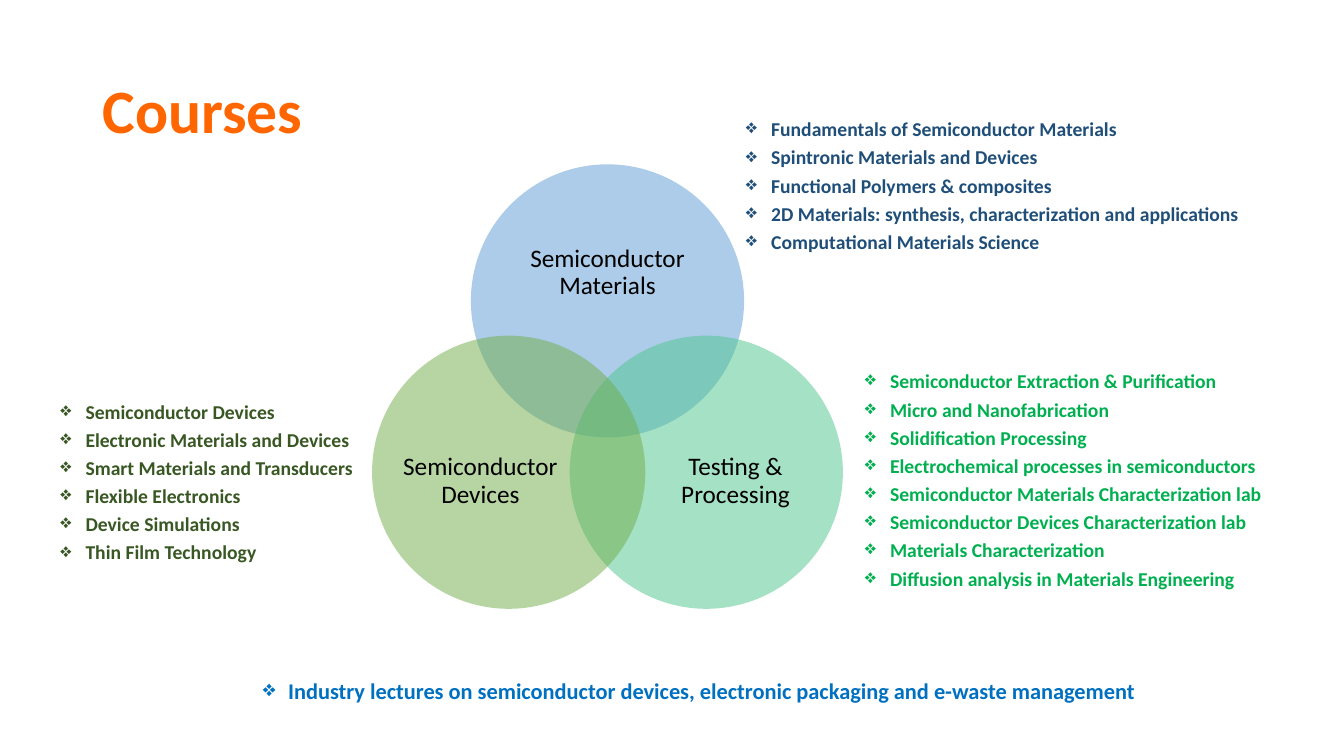
import pptx
import pptx.util
import pptx.dml.color
import pptx.enum.shapes
import pptx.enum.text
import pptx.oxml.ns
import lxml.etree

Inches = pptx.util.Inches
Pt = pptx.util.Pt
qn = pptx.oxml.ns.qn
ALIGN = pptx.enum.text.PP_ALIGN
ANCHOR = pptx.enum.text.MSO_ANCHOR

COLORS = {
    "title": "FF6600", "label": "000000",
    "blue circle": "5B9BD5", "mint circle": "4DC58D", "green circle": "70AD47",
    "materials": "1F4E79", "devices": "385723",
    "processing": "00B050", "industry": "0070C0",
}
DIAMETER = 2.71

# Circle colour, circle left and top, label, label box
VENN = [
    ("blue circle", 4.67, 1.63, "Semiconductor Materials", (5.03, 2.1, 1.99, 1.22)),
    ("mint circle", 5.65, 3.33, "Testing & Processing", (6.48, 4.03, 1.63, 1.49)),
    ("green circle", 3.69, 3.33, "Semiconductor Devices", (3.95, 4.03, 1.63, 1.49)),
]

# Colour, box, text size, courses
COURSES = [
    ("materials", (6.8, 1.14, 5.61, 1.56), 14, [
        "Fundamentals of Semiconductor Materials",
        "Spintronic Materials and Devices",
        "Functional Polymers & composites",
        "2D Materials: synthesis, characterization and applications",
        "Computational Materials Science",
    ]),
    ("devices", (0, 3.94, 4.16, 1.73), 14, [
        "Semiconductor Devices",
        "Electronic Materials and Devices",
        "Smart Materials and Transducers",
        "Flexible Electronics",
        "Device Simulations",
        "Thin Film Technology",
    ]),
    ("processing", (7.98, 3.64, 4.73, 2.31), 14, [
        "Semiconductor Extraction & Purification",
        "Micro and Nanofabrication",
        "Solidification Processing",
        "Electrochemical processes in semiconductors",
        "Semiconductor Materials Characterization lab",
        "Semiconductor Devices Characterization lab",
        "Materials Characterization",
        "Diffusion analysis in Materials Engineering",
    ]),
    ("industry", (2.01, 6.7, 10.54, 0.37), 16, [
        "Industry lectures on semiconductor devices, electronic packaging "
        "and e-waste management",
    ]),
]


def rgb(name):
    return pptx.dml.color.RGBColor.from_string(COLORS[name])


def apply(obj, values):
    for name, value in values.items():
        setattr(obj, name, value)


def add_text(s, box, lines, color, size, bold=False, frame=None, para=None):
    """Add a text box with one paragraph per line and return its frame."""
    tf = s.shapes.add_textbox(*map(Inches, box)).text_frame
    apply(tf, {"word_wrap": True, **(frame or {})})
    for i, line in enumerate(lines):
        p = tf.add_paragraph() if i else tf.paragraphs[0]
        apply(p, {"line_spacing": 0.9, **(para or {})})
        r = p.add_run()
        r.text = line
        apply(r.font, {"name": "Calibri", "size": Pt(size), "bold": bold})
        r.font.color.rgb = rgb(color)
    return tf


def add_circle(s, left, top, color):
    """Add a half-transparent circle without an outline."""
    sp = s.shapes.add_shape(pptx.enum.shapes.MSO_SHAPE.OVAL, Inches(left),
                            Inches(top), Inches(DIAMETER), Inches(DIAMETER))
    sp.shadow.inherit = False
    sp.line.fill.background()
    sp.fill.solid()
    sp.fill.fore_color.rgb = rgb(color)
    clr = sp.element.spPr.find(".//" + qn("a:srgbClr"))
    lxml.etree.SubElement(clr, qn("a:alpha"), val="50000")


def add_course_list(s, color, box, size, courses):
    """Add a bulleted list with a hanging indent."""
    tf = add_text(s, box, courses, color, size, bold=True,
                  para={"level": 1, "space_before": Pt(5)})
    for p in tf.paragraphs:
        pPr = p._p.get_or_add_pPr()
        pPr.set("marL", str(Inches(0.75)))
        pPr.set("indent", str(Inches(-0.25)))
        lxml.etree.SubElement(pPr, qn("a:buChar"), char="❖")


def main():
    prs = pptx.Presentation()
    apply(prs, {"slide_width": Inches(13.33), "slide_height": Inches(7.5)})
    s = prs.slides.add_slide(prs.slide_layouts[6])

    # Title
    add_text(s, (0.92, 0.4, 11.5, 1.45), ["Courses"], "title", 44, bold=True,
             frame={"vertical_anchor": ANCHOR.MIDDLE})

    # Venn diagram
    label_frame = {"vertical_anchor": ANCHOR.MIDDLE, "margin_left": 0,
                   "margin_right": 0, "margin_top": 0, "margin_bottom": 0}
    for color, left, top, label, box in VENN:
        add_circle(s, left, top, color)
        add_text(s, box, [label], "label", 18, frame=label_frame,
                 para={"alignment": ALIGN.CENTER})

    # Course lists
    for color, box, size, courses in COURSES:
        add_course_list(s, color, box, size, courses)

    prs.save("out.pptx")


if __name__ == "__main__":
    main()
